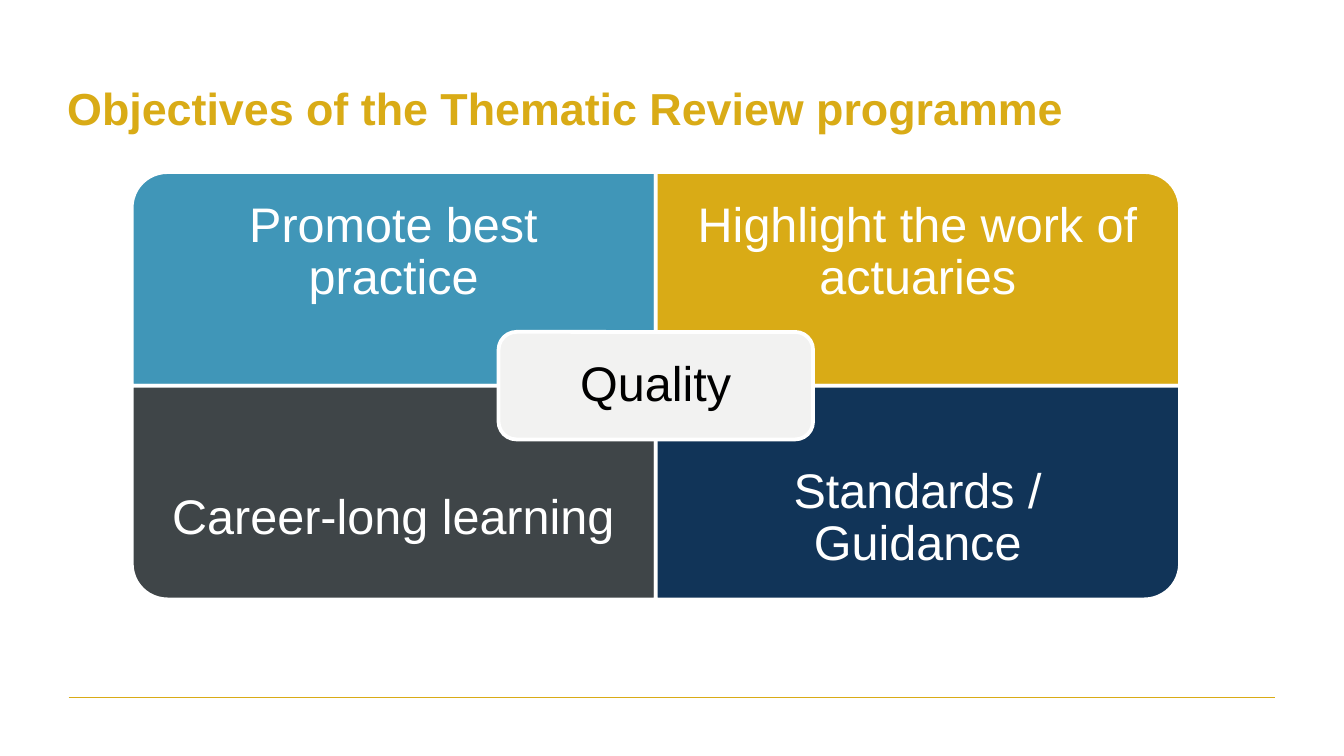
from pptx import Presentation
from pptx.dml.color import RGBColor
from pptx.enum.shapes import MSO_CONNECTOR, MSO_SHAPE
from pptx.enum.text import MSO_ANCHOR, PP_ALIGN
from pptx.oxml.ns import qn
from pptx.util import Inches, Pt
from lxml import etree

ROUND_ONE = MSO_SHAPE.ROUND_1_RECTANGLE
ROUND_ALL = MSO_SHAPE.ROUNDED_RECTANGLE
STRAIGHT = MSO_CONNECTOR.STRAIGHT
MIDDLE = MSO_ANCHOR.MIDDLE
LEFT, CENTER = PP_ALIGN.LEFT, PP_ALIGN.CENTER

THEME = {
    "font": "Arial",
    "title_size": 24,
    "label_size": 26,
    "gold": "D9AB16",
    "blue": "4096B8",
    "slate": "3F4548",
    "navy": "113458",
    "pale": "F2F2F1",
    "white": "FFFFFF",
    "black": "000000",
}

TITLE = "Objectives of the Thematic Review programme"
# label, colour, column, row, turn that brings the round corner outside
TILES = [
    ("Promote best practice", "blue", 0, 0, 270),
    ("Highlight the work of actuaries", "gold", 1, 0, 0),
    ("Career-long learning", "slate", 0, 1, 180),
    ("Standards / Guidance", "navy", 1, 1, 90),
]
HUB = "Quality"

SLIDE_W = 10
SLIDE_H = SLIDE_W * 9 / 16
GRID_X, GRID_Y = 0.98, 1.28
TILE_W, TILE_H = 3.9, 1.59
LABEL_H = 1.2
HUB_W, HUB_H = 2.34, 0.8
HUB_PAD = 0.04


def color(name):
    return RGBColor.from_string(THEME[name])


def write(frame, text, size, ink, align, pads, bold=False):
    frame.word_wrap = True
    frame.vertical_anchor = MIDDLE
    frame.margin_left = frame.margin_right = Inches(pads[0])
    frame.margin_top = frame.margin_bottom = Inches(pads[1])
    para = frame.paragraphs[0]
    para.alignment = align
    run = para.add_run()
    run.text = text
    font = run.font
    font.name, font.size, font.bold = THEME["font"], Pt(THEME[size]), bold
    font.color.rgb = color(ink)
    return para


def add_label(slide, text, box, ink, pad):
    label = slide.shapes.add_textbox(*map(Inches, box))
    para = write(label.text_frame, text, "label_size", ink, CENTER, (pad, pad))
    para.line_spacing = 0.9


def add_block(slide, kind, box, fill, turn=0):
    """Draw a block that fills the box after its turn."""
    x, y, w, h = box
    if turn % 180:
        x, y, w, h = x + (w - h) / 2, y + (h - w) / 2, h, w
    block = slide.shapes.add_shape(kind, *map(Inches, (x, y, w, h)))
    block.rotation = turn
    block.shadow.inherit = False
    block.fill.solid()
    block.fill.fore_color.rgb = color(fill)
    block.line.color.rgb = color("white")
    block.line.width = Pt(2)


def add_rule(slide):
    ends = map(Inches, (0.51, 5.19, 9.49, 5.19))
    rule = slide.shapes.add_connector(STRAIGHT, *ends)
    rule.line.color.rgb = color("gold")
    rule.line.width = Pt(1)
    etree.SubElement(rule._element.spPr, qn("a:effectLst"))


def add_title(slide):
    title = slide.shapes.title
    title.left, title.top, title.width, title.height = map(
        Inches, (0.43, 0.33, 9.07, 0.94))
    write(title.text_frame, TITLE, "title_size", "gold", LEFT, (0.07, 0.04), True)


def add_tiles(slide):
    for text, fill, col, row, turn in TILES:
        x, y = GRID_X + col * TILE_W, GRID_Y + row * TILE_H
        add_block(slide, ROUND_ONE, (x, y, TILE_W, TILE_H), fill, turn)
        top = y + row * (TILE_H - LABEL_H)
        add_label(slide, text, (x, top, TILE_W, LABEL_H), "white", 0.21)


def add_hub(slide):
    x = GRID_X + TILE_W - HUB_W / 2
    y = GRID_Y + TILE_H - HUB_H / 2
    add_block(slide, ROUND_ALL, (x, y, HUB_W, HUB_H), "pale")
    inner = (x + HUB_PAD, y + HUB_PAD, HUB_W - 2 * HUB_PAD, HUB_H - 2 * HUB_PAD)
    add_label(slide, HUB, inner, "black", 0.11)


def main():
    deck = Presentation()
    deck.slide_width, deck.slide_height = Inches(SLIDE_W), Inches(SLIDE_H)
    slide = deck.slides.add_slide(deck.slide_layouts[5])
    add_rule(slide)
    add_title(slide)
    add_tiles(slide)
    add_hub(slide)
    deck.save("out.pptx")


if __name__ == "__main__":
    main()
